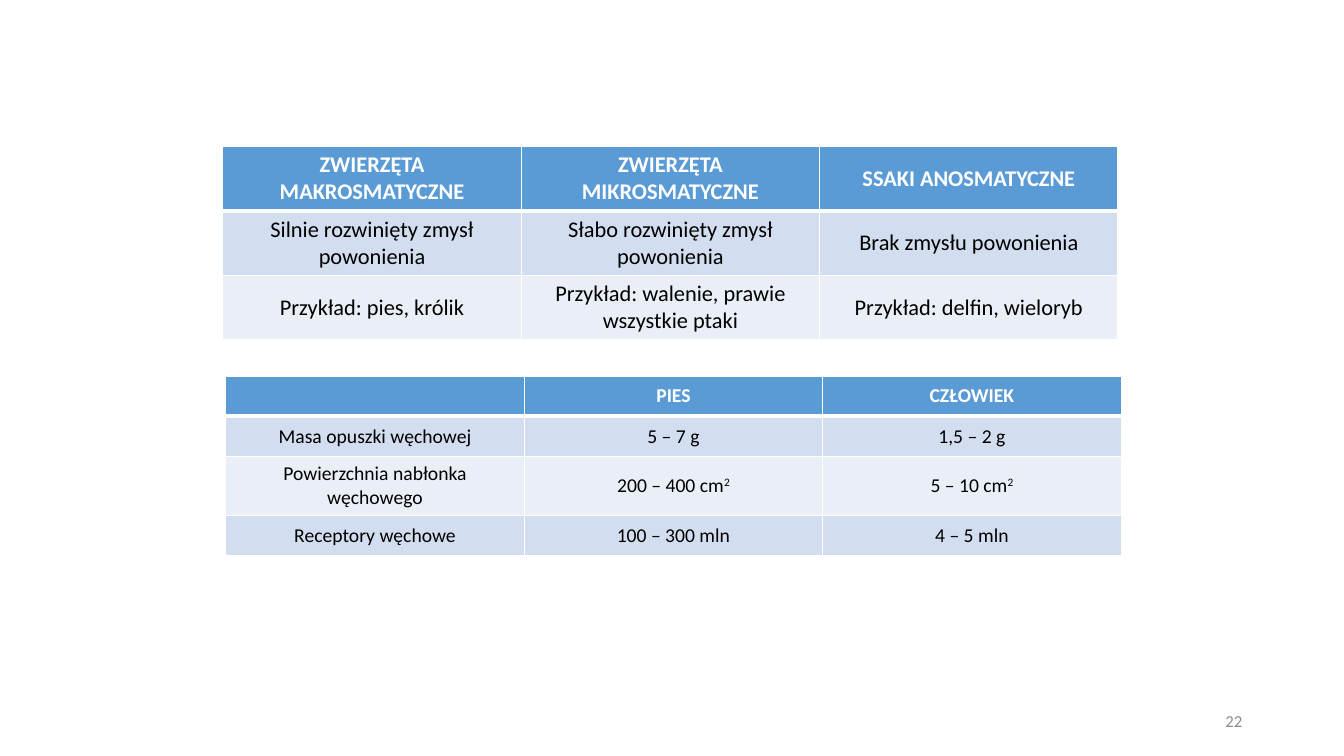
from dataclasses import dataclass

from lxml.etree import SubElement
from pptx import Presentation
from pptx.dml.color import RGBColor
from pptx.enum.text import MSO_ANCHOR, PP_ALIGN
from pptx.oxml.ns import qn
from pptx.slide import Slide
from pptx.table import _Cell as Cell
from pptx.text.text import _Paragraph as Paragraph
from pptx.util import Inches, Pt

WHITE = RGBColor(0xFF, 0xFF, 0xFF)
BLACK = RGBColor(0x00, 0x00, 0x00)
GREY = RGBColor(0x8C, 0x8C, 0x8C)
HEADER_BLUE = RGBColor(0x5B, 0x9B, 0xD5)
BAND_DARK = RGBColor(0xD2, 0xDE, 0xEF)
BAND_LIGHT = RGBColor(0xEA, 0xEF, 0xF7)
COLUMN_WIDTH = 2.96


@dataclass
class TableSpec:
    left: float
    top: float
    size: int
    heights: list[float]
    rows: list[list[str]]


TABLES = [
    TableSpec(2.21, 1.45, 16, [0.64] * 3, [
        ["ZWIERZĘTA MAKROSMATYCZNE", "ZWIERZĘTA MIKROSMATYCZNE", "SSAKI ANOSMATYCZNE"],
        ["Silnie rozwinięty zmysł powonienia", "Słabo rozwinięty zmysł powonienia",
         "Brak zmysłu powonienia"],
        ["Przykład: pies, królik", "Przykład: walenie, prawie wszystkie ptaki",
         "Przykład: delfin, wieloryb"],
    ]),
    TableSpec(2.24, 3.73, 14, [0.4, 0.4, 0.58, 0.4], [
        ["", "PIES", "CZŁOWIEK"],
        ["Masa opuszki węchowej", "5 – 7 g", "1,5 – 2 g"],
        ["Powierzchnia nabłonka węchowego", "200 – 400 cm^2", "5 – 10 cm^2"],
        ["Receptory węchowe", "100 – 300 mln", "4 – 5 mln"],
    ]),
]


def add_run(p: Paragraph, text: str, size: int, color: RGBColor,
            bold: bool = False, superscript: bool = False) -> None:
    r = p.add_run()
    r.text = text
    r.font.name = "Calibri"
    r.font.size = Pt(size)
    r.font.bold = bold
    r.font.color.rgb = color
    if superscript:
        r.font._element.set("baseline", "30000")


def set_borders(cell: Cell, top: int, bottom: int) -> None:
    """Give the cell white borders, widths in points; the sides are 1 pt."""
    tc_pr = cell._tc.get_or_add_tcPr()
    for tag, width in (("a:lnL", 1), ("a:lnR", 1), ("a:lnT", top), ("a:lnB", bottom)):
        ln = SubElement(tc_pr, qn(tag), w=str(Pt(width)))
        SubElement(SubElement(ln, qn("a:solidFill")), qn("a:srgbClr"), val=str(WHITE))


def fill_cell(cell: Cell, text: str, row: int, size: int) -> None:
    """Format a cell; text after ^ is superscript."""
    header = row == 0
    set_borders(cell, top=3 if row == 1 else 1, bottom=3 if header else 1)
    cell.fill.solid()
    cell.fill.fore_color.rgb = (
        HEADER_BLUE if header else BAND_DARK if row % 2 else BAND_LIGHT)
    cell.vertical_anchor = MSO_ANCHOR.MIDDLE
    p = cell.text_frame.paragraphs[0]
    p.alignment = PP_ALIGN.CENTER
    for i, part in enumerate(text.split("^")):
        if part:
            add_run(p, part, size, WHITE if header else BLACK, header, i == 1)


def add_table(s: Slide, spec: TableSpec) -> None:
    columns = len(spec.rows[0])
    table = s.shapes.add_table(
        len(spec.rows), columns, Inches(spec.left), Inches(spec.top),
        Inches(COLUMN_WIDTH * columns), Inches(sum(spec.heights))).table
    for column in table.columns:
        column.width = Inches(COLUMN_WIDTH)
    for i, (height, texts) in enumerate(zip(spec.heights, spec.rows)):
        table.rows[i].height = Inches(height)
        for j, text in enumerate(texts):
            fill_cell(table.cell(i, j), text, i, spec.size)


def add_page_number(s: Slide, number: str) -> None:
    sp = s.shapes.add_textbox(Inches(9.42), Inches(6.95), Inches(3), Inches(0.4))
    tf = sp.text_frame
    tf.word_wrap = True
    tf.vertical_anchor = MSO_ANCHOR.MIDDLE
    p = tf.paragraphs[0]
    p.alignment = PP_ALIGN.RIGHT
    add_run(p, number, 12, GREY)


def main() -> None:
    prs = Presentation()
    prs.slide_width, prs.slide_height = Inches(13.33), Inches(7.5)
    s = prs.slides.add_slide(prs.slide_layouts[6])
    add_page_number(s, "22")
    for spec in TABLES:
        add_table(s, spec)
    prs.save("out.pptx")


if __name__ == "__main__":
    main()
